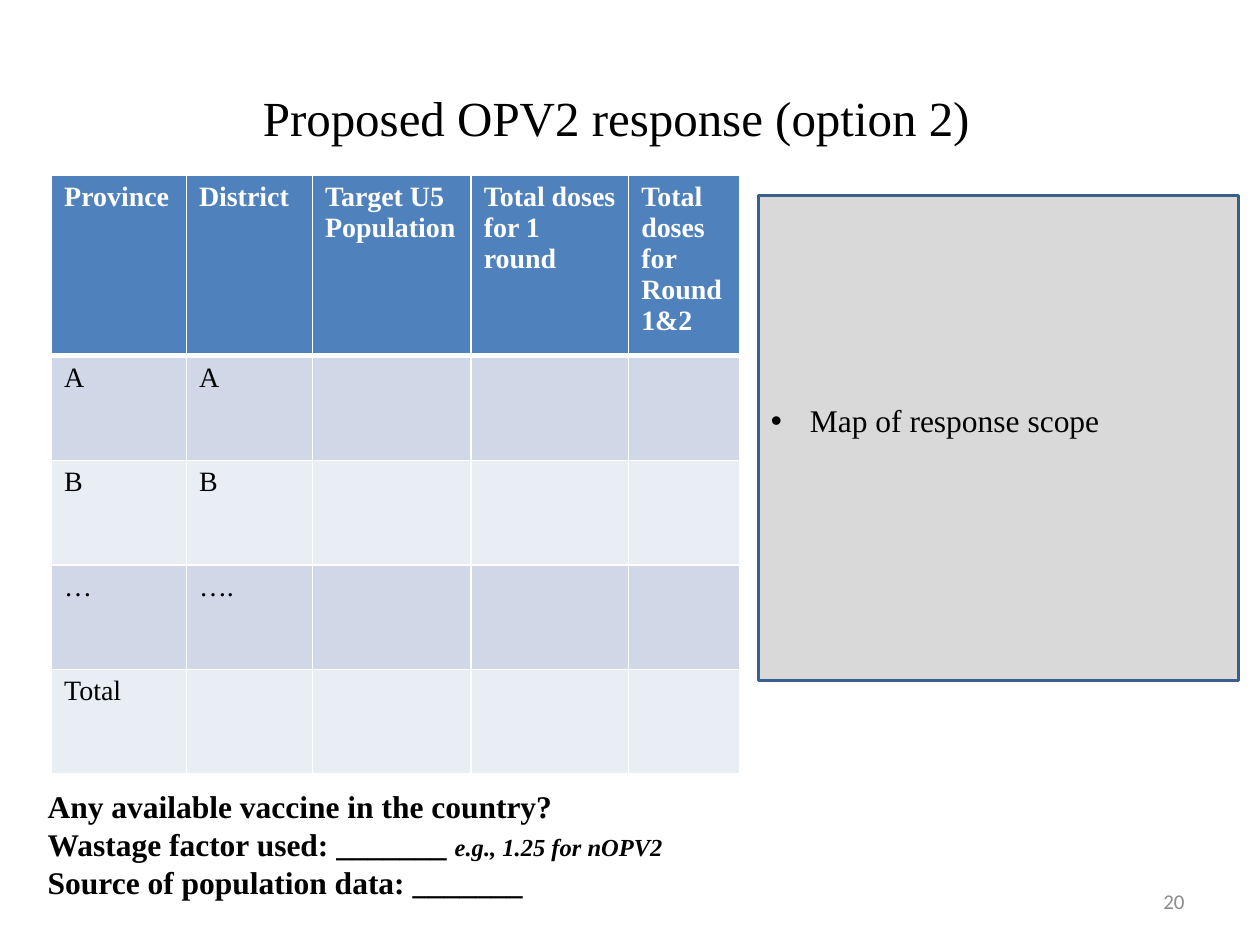
from dataclasses import dataclass

from lxml.etree import SubElement
from pptx import Presentation
from pptx.dml.color import RGBColor
from pptx.enum.shapes import MSO_SHAPE
from pptx.enum.text import MSO_ANCHOR, MSO_AUTO_SIZE, PP_ALIGN
from pptx.oxml.ns import qn
from pptx.util import Inches, Pt


@dataclass(frozen=True)
class Theme:
    font: str = "Times New Roman"
    number_font: str = "Calibri"
    ink: str = "000000"
    white: str = "FFFFFF"
    muted: str = "8C8C8C"
    header: str = "4F81BD"
    bands: tuple = ("D0D8E8", "E9EDF4")
    panel: str = "D9D9D9"
    outline: str = "3A5F8C"
    title: int = 28
    body: int = 18
    cell: int = 16
    hint: int = 14
    number: int = 12


THEME = Theme()
COLUMN_WIDTHS = (1.07, 1, 1.26, 1.25, 0.88)
HEADER_HEIGHT = 1.41
ROWS = (
    ("Province", "District", "Target U5 Population", "Total doses for 1 round", "Total doses for Round 1&2"),
    ("A", "A", "", "", ""),
    ("B", "B", "", "", ""),
    ("…", "….", "", "", ""),
    ("Total", "", "", "", ""),
)
NOTES = (
    (("Any available vaccine in the country?", {}),),
    (("Wastage factor used: _______ ", {}),
     ("e.g., 1.25 for nOPV2", {"size": THEME.hint, "italic": True})),
    (("Source of population data: _______", {}),),
)


def add_span(para, text, size=THEME.body, color=THEME.ink, font=THEME.font, bold=False, italic=False):
    span = para.add_run()
    span.text = text
    span.font.name = font
    span.font.size = Pt(size)
    span.font.bold = bold
    span.font.italic = italic
    span.font.color.rgb = RGBColor.from_string(color)


def add_line(page, box, text, align, **style):
    frame = page.shapes.add_textbox(*map(Inches, box)).text_frame
    frame.word_wrap = True
    frame.vertical_anchor = MSO_ANCHOR.MIDDLE
    para = frame.paragraphs[0]
    para.alignment = align
    add_span(para, text, **style)


def set_borders(cell, bottom):
    properties = cell._tc.get_or_add_tcPr()
    for side, width in (("L", 1), ("R", 1), ("T", 1), ("B", bottom)):
        line = SubElement(properties, qn(f"a:ln{side}"), w=str(Pt(width)))
        fill = SubElement(line, qn("a:solidFill"))
        SubElement(fill, qn("a:srgbClr"), val=THEME.white)


def add_dose_table(page, box):
    table = page.shapes.add_table(len(ROWS), len(COLUMN_WIDTHS), *map(Inches, box)).table
    for column, width in zip(table.columns, COLUMN_WIDTHS):
        column.width = Inches(width)
    body_height = (box[3] - HEADER_HEIGHT) / (len(ROWS) - 1)
    for index, texts in enumerate(ROWS):
        is_header = index == 0
        table.rows[index].height = Inches(HEADER_HEIGHT if is_header else body_height)
        for cell, text in zip(table.rows[index].cells, texts):
            set_borders(cell, bottom=3 if is_header else 1)
            cell.fill.solid()
            shade = THEME.header if is_header else THEME.bands[(index - 1) % 2]
            cell.fill.fore_color.rgb = RGBColor.from_string(shade)
            if text:
                add_span(cell.text_frame.paragraphs[0], text, size=THEME.cell, bold=is_header,
                         color=THEME.white if is_header else THEME.ink)


def add_map_panel(page, box):
    panel = page.shapes.add_shape(MSO_SHAPE.RECTANGLE, *map(Inches, box))
    panel.shadow.inherit = False
    panel.fill.solid()
    panel.fill.fore_color.rgb = RGBColor.from_string(THEME.panel)
    panel.line.color.rgb = RGBColor.from_string(THEME.outline)
    panel.line.width = Pt(2)
    frame = panel.text_frame
    frame.word_wrap = True
    frame.vertical_anchor = MSO_ANCHOR.MIDDLE
    frame.margin_bottom = Inches(0.33)
    para = frame.paragraphs[0]
    para.alignment = PP_ALIGN.LEFT
    properties = para._p.get_or_add_pPr()
    properties.set("marL", str(Inches(0.31)))
    properties.set("indent", str(Inches(-0.31)))
    SubElement(properties, qn("a:buFont"), typeface="Arial")
    SubElement(properties, qn("a:buChar"), char="•")
    add_span(para, "Map of response scope")


def add_notes(page, box):
    frame = page.shapes.add_textbox(*map(Inches, box)).text_frame
    frame.word_wrap = False
    frame.auto_size = MSO_AUTO_SIZE.SHAPE_TO_FIT_TEXT
    for index, spans in enumerate(NOTES):
        para = frame.add_paragraph() if index else frame.paragraphs[0]
        for text, style in spans:
            add_span(para, text, bold=True, **style)


def main():
    deck = Presentation()
    deck.slide_width, deck.slide_height = Inches(10), Inches(7.5)
    page = deck.slides.add_slide(deck.slide_layouts[6])
    add_line(page, (0.28, 0.3, 9.22, 1.25), "Proposed OPV2 response (option 2)",
             PP_ALIGN.CENTER, size=THEME.title)
    add_line(page, (7.17, 6.95, 2.33, 0.4), "20", PP_ALIGN.RIGHT,
             size=THEME.number, color=THEME.muted, font=THEME.number_font)
    add_dose_table(page, (0.41, 1.39, 5.46, 4.73))
    add_map_panel(page, (6.02, 1.55, 3.81, 3.85))
    add_notes(page, (0.28, 6.2, 5.13, 1.62))
    deck.save("out.pptx")


if __name__ == "__main__":
    main()
